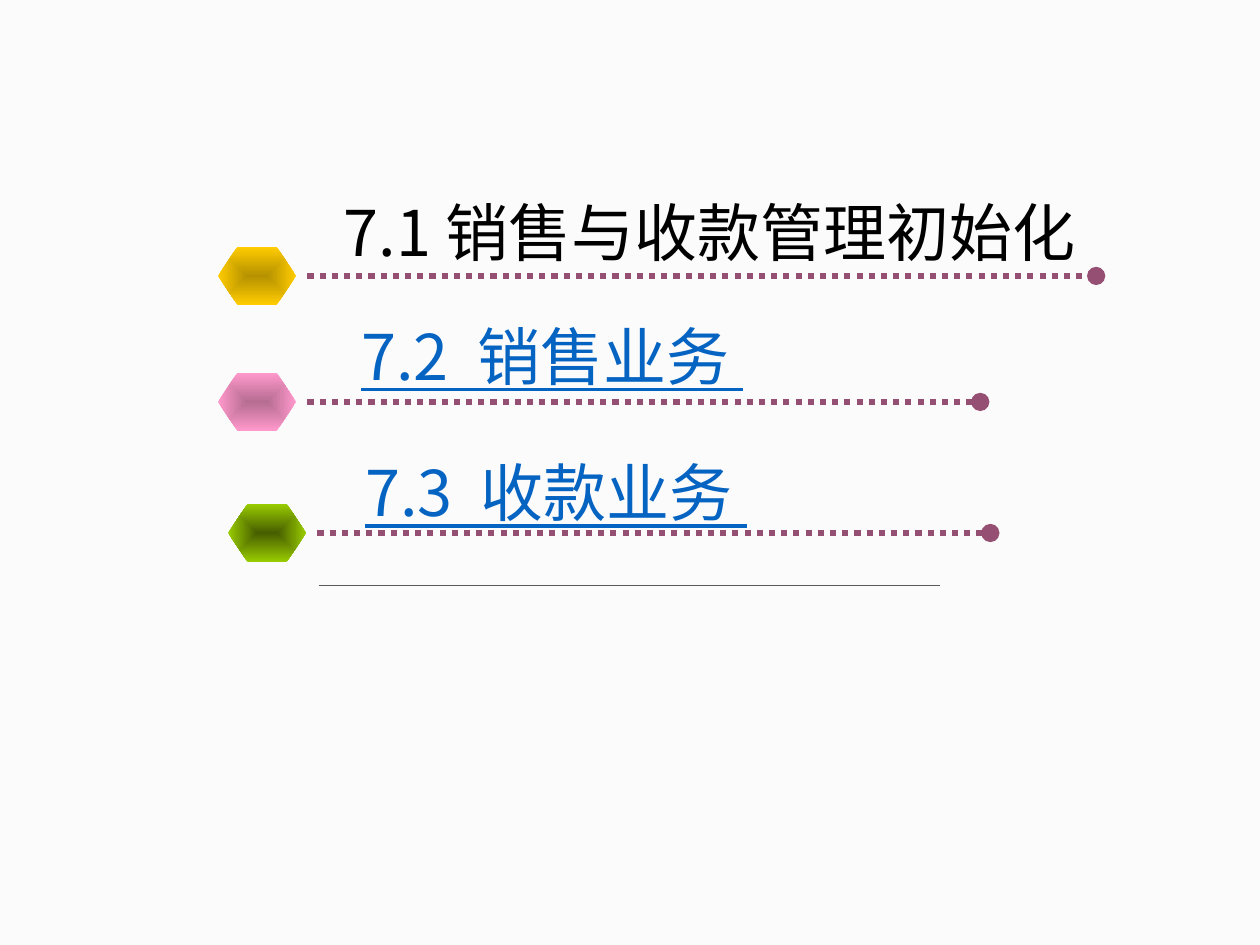
from dataclasses import dataclass

from lxml import etree
from pptx import Presentation
from pptx.dml.color import RGBColor
from pptx.enum.dml import MSO_LINE
from pptx.enum.shapes import MSO_CONNECTOR, MSO_SHAPE
from pptx.enum.text import MSO_AUTO_SIZE
from pptx.oxml import parse_xml
from pptx.oxml.ns import nsdecls, qn
from pptx.util import Inches, Pt

FONT = "Noto Sans CJK JP"
BACKGROUND = RGBColor(0xFB, 0xFB, 0xFC)
BLACK = RGBColor(0, 0, 0)
LINK_BLUE = RGBColor(0x05, 0x63, 0xC1)
PLUM = RGBColor(0x95, 0x4F, 0x72)
GREY = RGBColor(0x59, 0x59, 0x59)
DARK_GOLD, GOLD = RGBColor(0xB6, 0x92, 0x00), RGBColor(0xFF, 0xCC, 0x00)
DARK_PINK, PINK = RGBColor(0xB6, 0x6D, 0x92), RGBColor(0xFF, 0x99, 0xCC)
DARK_GREEN, GREEN = RGBColor(0x47, 0x5E, 0x00), RGBColor(0x99, 0xCC, 0x00)

MARKER_WIDTH, MARKER_HEIGHT = 0.62, 0.46
RULE_OFFSET = 0.71
TEXT_HEIGHT = 0.7


@dataclass
class Section:
    text: str
    left: float
    top: float
    rule_length: float
    text_offset: tuple
    text_width: float
    inner: RGBColor
    outer: RGBColor
    color: RGBColor = LINK_BLUE
    underline: bool = True


SECTIONS = [
    Section("7.1 销售与收款管理初始化", 1.73, 1.96, 6.26, (0.9, -0.47), 6.2,
            DARK_GOLD, GOLD, BLACK, False),
    Section("7.2  销售业务 ", 1.73, 2.96, 5.34, (1.04, -0.49), 3.45,
            DARK_PINK, PINK),
    Section("7.3  收款业务 ", 1.81, 4, 5.34, (0.99, -0.45), 3.45,
            DARK_GREEN, GREEN),
]


def add_rule(shapes, left, top, length, color, width):
    rule = shapes.add_connector(
        MSO_CONNECTOR.STRAIGHT, Inches(left), Inches(top),
        Inches(left + length), Inches(top))
    rule.line.color.rgb = color
    rule.line.width = Pt(width)
    etree.SubElement(rule._element.spPr, qn("a:effectLst"))
    return rule


def add_marker(shapes, left, top, inner, outer):
    marker = shapes.add_shape(
        MSO_SHAPE.HEXAGON, Inches(left), Inches(top),
        Inches(MARKER_WIDTH), Inches(MARKER_HEIGHT))
    marker.adjustments[0] = 0.336
    marker.shadow.inherit = False
    marker.line.fill.background()
    marker.fill.gradient()
    for stop, position, color in zip(
            marker.fill.gradient_stops, (0, 1), (inner, outer)):
        stop.position = position
        stop.color.rgb = color
    gradient = marker._element.spPr.find(qn("a:gradFill"))
    gradient.replace(gradient.find(qn("a:lin")), parse_xml(
        f'<a:path {nsdecls("a")} path="shape">'
        '<a:fillToRect l="50000" t="50000" r="50000" b="50000"/></a:path>'))


def add_label(shapes, left, top, section):
    label = shapes.add_textbox(
        Inches(left), Inches(top),
        Inches(section.text_width), Inches(TEXT_HEIGHT))
    frame = label.text_frame
    frame.word_wrap = False
    frame.auto_size = MSO_AUTO_SIZE.SHAPE_TO_FIT_TEXT
    frame.text = section.text
    run = frame.paragraphs[0].runs[0]
    run.font.size = Pt(36)
    run.font.name = FONT
    run.font.color.rgb = section.color
    run.font.underline = section.underline
    east_asian = etree.SubElement(run.font._element, qn("a:ea"))
    east_asian.set("typeface", FONT)


def add_section(slide, section):
    shapes = slide.shapes.add_group_shape().shapes
    left, top = section.left, section.top
    rule = add_rule(shapes, left + RULE_OFFSET, top + MARKER_HEIGHT / 2,
                    section.rule_length, PLUM, 3.5)
    rule.line.dash_style = MSO_LINE.ROUND_DOT
    tail = etree.SubElement(rule.line._get_or_add_ln(), qn("a:tailEnd"))
    tail.set("type", "oval")
    add_marker(shapes, left, top, section.inner, section.outer)
    across, down = section.text_offset
    add_label(shapes, left + across, top + down, section)


def main():
    presentation = Presentation()
    presentation.slide_width = Inches(10)
    presentation.slide_height = Inches(7.5)
    slide = presentation.slides.add_slide(presentation.slide_layouts[6])
    slide.background.fill.solid()
    slide.background.fill.fore_color.rgb = BACKGROUND
    add_rule(slide.shapes, 2.53, 4.65, 4.93, GREY, 0.5)
    for section in SECTIONS:
        add_section(slide, section)
    presentation.save("out.pptx")


if __name__ == "__main__":
    main()
